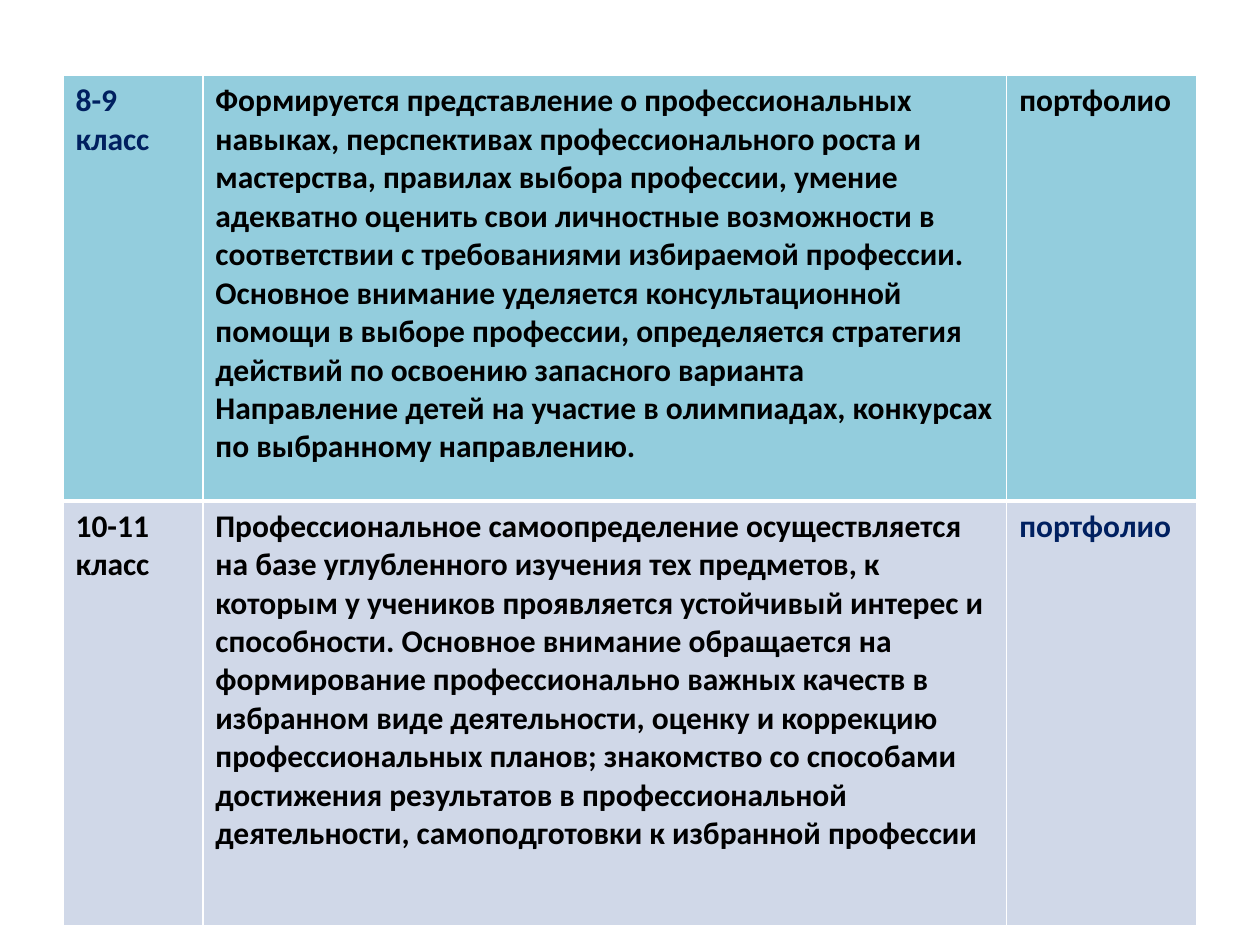
import dataclasses

import lxml.etree
import pptx
import pptx.dml.color
import pptx.oxml.ns
import pptx.util

Inches = pptx.util.Inches


@dataclasses.dataclass(frozen=True)
class Theme:
    font: str = "Calibri"
    text_size: int = 18
    thin_line: int = 1
    thick_line: int = 3
    navy: str = "002060"
    black: str = "000000"
    white: str = "FFFFFF"
    aqua: str = "93CDDD"
    lavender: str = "D0D8E8"


THEME = Theme()

COLUMN_WIDTHS = (1.11, 6.38, 1.51)
TABLE_HEIGHT = 6.75

MIDDLE_GRADES = (
    "Формируется представление о профессиональных навыках, перспективах "
    "профессионального роста и мастерства, правилах выбора профессии, умение "
    "адекватно оценить свои личностные возможности в соответствии с "
    "требованиями избираемой профессии. Основное внимание уделяется "
    "консультационной помощи в выборе профессии, определяется стратегия "
    "действий по освоению запасного варианта",
    "Направление детей на участие в олимпиадах, конкурсах по выбранному "
    "направлению.",
)
SENIOR_GRADES = (
    "Профессиональное самоопределение осуществляется на базе углубленного "
    "изучения тех предметов, к которым у учеников проявляется устойчивый "
    "интерес и способности. Основное внимание обращается на формирование "
    "профессионально важных качеств в избранном виде деятельности, оценку и "
    "коррекцию профессиональных планов; знакомство со способами достижения "
    "результатов в профессиональной деятельности, самоподготовки к избранной "
    "профессии",
)

ROWS = (
    (THEME.aqua, (
        (("8-9 класс",), THEME.navy),
        (MIDDLE_GRADES, THEME.black),
        (("портфолио",), THEME.black),
    )),
    (THEME.lavender, (
        (("10-11 класс",), THEME.black),
        (SENIOR_GRADES, THEME.black),
        (("портфолио",), THEME.navy),
    )),
)


def rgb(value):
    return pptx.dml.color.RGBColor.from_string(value)


def set_borders(cell, top, bottom):
    qualified = pptx.oxml.ns.qn
    properties = cell._tc.get_or_add_tcPr()
    widths = {"L": THEME.thin_line, "R": THEME.thin_line, "T": top, "B": bottom}
    for side, width in widths.items():
        line = lxml.etree.SubElement(
            properties, qualified(f"a:ln{side}"), w=str(pptx.util.Pt(width))
        )
        fill = lxml.etree.SubElement(line, qualified("a:solidFill"))
        lxml.etree.SubElement(fill, qualified("a:srgbClr"), val=THEME.white)


def write_cell(cell, paragraphs, color):
    frame = cell.text_frame
    for index, text in enumerate(paragraphs):
        para = frame.add_paragraph() if index else frame.paragraphs[0]
        span = para.add_run()
        span.text = text
        span.font.name = THEME.font
        span.font.size = pptx.util.Pt(THEME.text_size)
        span.font.bold = True
        span.font.color.rgb = rgb(color)


def add_grades_table(page):
    table = page.shapes.add_table(
        len(ROWS), len(COLUMN_WIDTHS),
        Inches(0.5), Inches(0.6), Inches(sum(COLUMN_WIDTHS)), Inches(TABLE_HEIGHT),
    ).table
    table.first_row = False
    table.horz_banding = False
    for column, width in zip(table.columns, COLUMN_WIDTHS):
        column.width = Inches(width)
    for row_index, (fill, contents) in enumerate(ROWS):
        table.rows[row_index].height = Inches(TABLE_HEIGHT / len(ROWS))
        top = THEME.thick_line if row_index else THEME.thin_line
        bottom = THEME.thin_line if row_index else THEME.thick_line
        for column_index, (paragraphs, color) in enumerate(contents):
            cell = table.cell(row_index, column_index)
            set_borders(cell, top, bottom)
            cell.fill.solid()
            cell.fill.fore_color.rgb = rgb(fill)
            write_cell(cell, paragraphs, color)


def main():
    deck = pptx.Presentation()
    deck.slide_width = Inches(10)
    deck.slide_height = Inches(7.5)
    page = deck.slides.add_slide(deck.slide_layouts[6])
    add_grades_table(page)
    deck.save("out.pptx")


if __name__ == "__main__":
    main()
